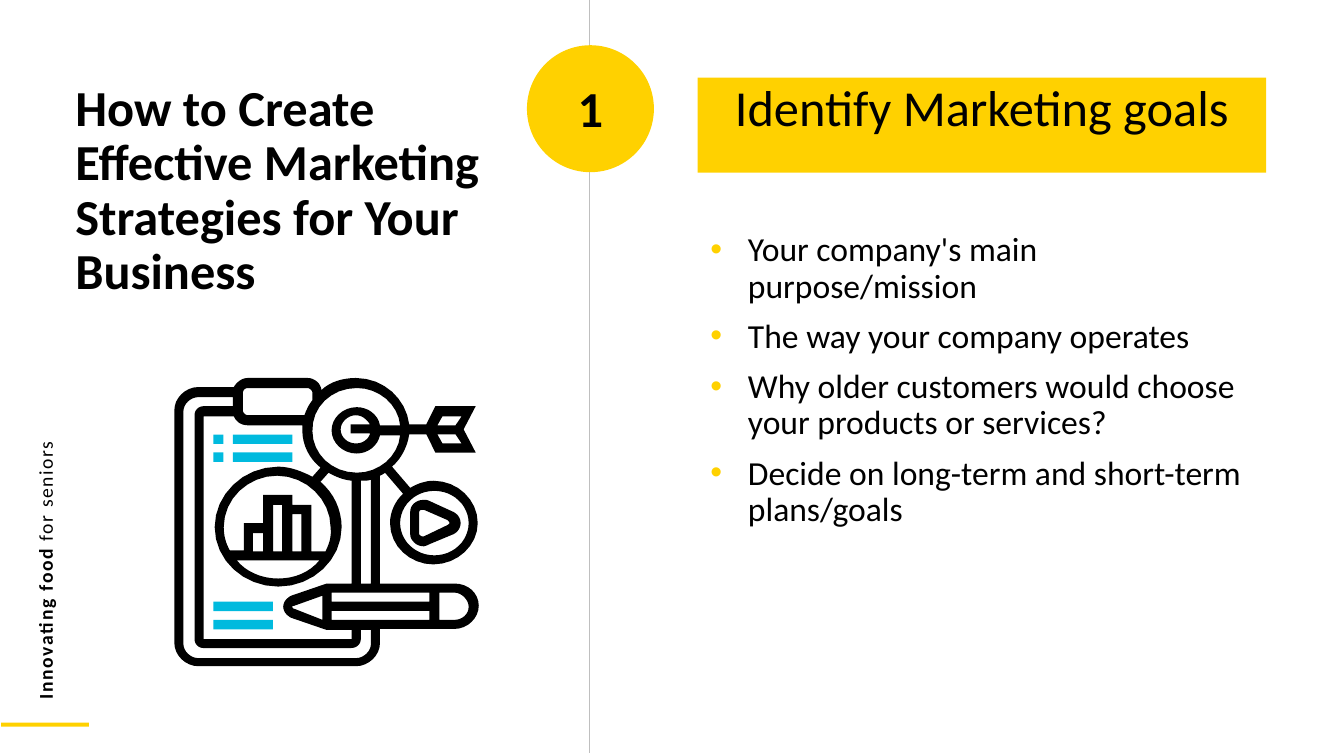
from dataclasses import dataclass
from math import cos, pi, sin

from lxml import etree
from pptx import Presentation, util as u
from pptx.dml.color import RGBColor
from pptx.enum import shapes, text
from pptx.oxml import ns


@dataclass(frozen=True)
class Theme:
    font: str = "Calibri"
    ink: str = "000000"
    yellow: str = "FFD100"
    cyan: str = "00BADE"
    rule: str = "BFBFBF"
    heading: int = 36
    body: int = 24
    tagline: int = 14


# Icon outlines use hundredths of an inch, measured from the slide corner
def outline(*steps):
    """Points of an outline; a step is a corner (x, y) or a cubic curve of six numbers."""
    points = []
    for step in steps:
        if len(step) == 2:
            points.append(step)
            continue
        bends = [points[-1], step[:2], step[2:4], step[4:]]
        for t in (i / 8 for i in range(1, 9)):
            weights = ((1 - t) ** 3, 3 * t * (1 - t) ** 2, 3 * t * t * (1 - t), t ** 3)
            points.append(tuple(sum(w * b[axis] for w, b in zip(weights, bends)) for axis in (0, 1)))
    return points


def oval(x, y, rx, ry):
    return [(x + rx * cos(pi * i / 24), y + ry * sin(pi * i / 24)) for i in range(48)]


def box(left, top, right, bottom):
    return [(left, top), (right, top), (right, bottom), (left, bottom)]


SILHOUETTE = outline(
    (451, 579), (377, 579), (377, 472), (379, 471, 381, 470, 382, 469), (400, 490),
    (392, 497, 387, 508, 387, 519), (387, 542, 407, 560, 430, 560),
    (454, 560, 474, 541, 474, 519), (474, 496, 454, 477, 430, 477),
    (422, 477, 414, 480, 407, 484), (389, 463), (398, 455, 404, 444, 406, 431),
    (423, 431), (432, 449), (472, 449), (460, 426), (472, 403), (432, 403),
    (423, 421), (406, 421), (403, 396, 381, 375, 353, 375),
    (340, 375, 327, 379, 319, 387), (318, 380, 312, 375, 305, 375), (246, 375),
    (240, 375, 235, 379, 232, 384), (197, 384), (184, 384, 173, 395, 173, 407),
    (173, 638), (173, 650, 184, 661, 197, 661), (353, 661),
    (366, 661, 377, 650, 377, 638), (377, 624), (451, 624),
    (464, 624, 475, 613, 475, 601), (475, 588, 464, 579, 451, 579))
PAPER = outline(
    (232, 413), (234, 418, 239, 422, 246, 422), (300, 422), (300, 427),
    (300, 442, 307, 455, 318, 464), (310, 473), (300, 468, 288, 463, 276, 463),
    (241, 463, 213, 491, 213, 523), (213, 556, 242, 582, 276, 582),
    (311, 582, 339, 555, 339, 523), (339, 506, 331, 489, 318, 478), (326, 469),
    (333, 473, 340, 476, 349, 477), (349, 579), (324, 579), (289, 591),
    (285, 593, 281, 597, 281, 602), (281, 607, 285, 611, 289, 613), (324, 625),
    (349, 625), (349, 634), (202, 634), (202, 413))
BOARD_EDGE = outline(
    (368, 639), (368, 646, 361, 653, 353, 653), (197, 653),
    (189, 653, 182, 646, 182, 639), (182, 408), (182, 401, 189, 394, 197, 394),
    (231, 394), (231, 403), (202, 403), (197, 403, 193, 407, 193, 412), (193, 634),
    (193, 639, 197, 643, 202, 643), (348, 643), (354, 643, 358, 639, 358, 634),
    (358, 625), (368, 625))
BOARD_SIDE = outline((368, 579), (358, 579), (358, 477), (361, 477, 365, 477, 368, 476))
CLIP = outline(
    (241, 390), (241, 387, 243, 385, 246, 385), (305, 385),
    (307, 385, 310, 387, 310, 390), (310, 397), (306, 402, 304, 407, 302, 412),
    (246, 412), (244, 412, 241, 410, 241, 407))
TARGET = outline(
    (354, 385), (376, 385, 395, 401, 397, 422), (377, 422),
    (375, 411, 365, 404, 354, 404), (340, 404, 329, 415, 329, 427),
    (329, 439, 340, 450, 354, 450), (365, 450, 375, 442, 377, 432), (397, 432),
    (395, 453, 376, 469, 354, 469), (329, 469, 310, 450, 310, 428),
    (309, 404, 329, 385, 354, 385))
BULLSEYE = outline(
    (367, 431), (365, 436, 360, 440, 353, 440), (345, 440, 338, 434, 338, 426),
    (338, 419, 345, 412, 353, 412), (359, 412, 364, 416, 367, 421), (348, 421),
    (348, 430), (367, 430))
FLETCHING = [[(439, 440), (434, 431), (452, 431), (458, 440)],
             [(439, 413), (458, 413), (452, 422), (434, 422)]]
CHART_DISC = outline(
    (323, 547), (309, 547), (309, 501), (290, 501), (290, 491), (261, 491), (261, 519),
    (242, 519), (242, 546), (228, 546), (224, 539, 222, 531, 222, 523),
    (222, 495, 246, 472, 275, 472), (304, 472, 328, 496, 328, 523),
    (329, 532, 327, 539, 323, 547))
CHART_BASE = outline((317, 556), (307, 568, 292, 574, 276, 574), (259, 574, 244, 567, 235, 556))
COLUMNS = [box(290, 510, 299, 547), box(271, 501, 280, 547), box(251, 529, 261, 547)]
PENCIL = [
    outline((292, 604), (291, 604, 290, 603, 290, 602), (290, 601, 291, 601, 292, 601),
            (320, 591), (320, 615)),
    box(329, 606, 426, 615), box(329, 588, 426, 597),
    outline((451, 615), (436, 615), (436, 588), (451, 588),
            (458, 588, 465, 595, 465, 602), (465, 610, 458, 615, 451, 615))]
PLAN_ICON = [SILHOUETTE, PAPER, BOARD_EDGE, BOARD_SIDE, CLIP, TARGET, BULLSEYE, *FLETCHING,
             CHART_DISC, CHART_BASE, *COLUMNS, *PENCIL, oval(431, 519, 34, 32)]
PLAY_ICON = [
    outline((407, 530), (407, 536, 413, 542, 420, 542), (422, 542, 424, 541, 426, 540),
            (450, 530), (454, 528, 457, 524, 457, 519), (457, 514, 454, 510, 450, 508),
            (426, 497), (424, 496, 423, 496, 420, 496), (413, 496, 407, 501, 407, 508)),
    outline((416, 508), (416, 506, 418, 506, 419, 506), (421, 506), (444, 516),
            (445, 517, 446, 518, 446, 519), (446, 520, 445, 520, 444, 521),
            (421, 532), (419, 533, 416, 531, 416, 530))]


class StrategySlide:
    def __init__(self, deck, theme):
        self.theme = theme
        self.slide = deck.slides.add_slide(deck.slide_layouts[6])

    def paint(self, shape, color):
        shape.shadow.inherit = False
        shape.fill.solid()
        shape.fill.fore_color.rgb = RGBColor.from_string(color)
        shape.line.fill.background()
        return shape

    def block(self, kind, place, color):
        shape = self.slide.shapes.add_shape(kind, *map(u.Cm, place))
        return self.paint(shape, color)

    def rule(self, x, top, bottom):
        line = self.slide.shapes.add_connector(
            shapes.MSO_CONNECTOR.STRAIGHT, *map(u.Cm, (x, top, x, bottom)))
        line.line.color.rgb = RGBColor.from_string(self.theme.rule)
        line.line.width = u.Pt(0.75)
        etree.SubElement(line._element.spPr, ns.qn("a:effectLst"))

    def icon(self, outlines, color):
        builder = None
        for points in outlines:
            points = [(x * 10, y * 10) for x, y in points]
            if builder is None:
                builder = self.slide.shapes.build_freeform(*points[0], scale=u.Cm(2.54) / 1000)
            else:
                builder.move_to(*points[0])
            builder.add_line_segments(points[1:], close=True)
        self.paint(builder.convert_to_shape(), color)

    def textbox(self, place):
        return self.slide.shapes.add_textbox(*map(u.Cm, place))

    def add_text(self, shape, paragraphs, size, align=text.PP_ALIGN.LEFT, bullet=False,
                 spacing=0.9, tracking=None):
        """Each paragraph is a list of (words, bold) runs."""
        frame = shape.text_frame
        frame.word_wrap = True
        frame.vertical_anchor = text.MSO_ANCHOR.TOP
        for index, runs in enumerate(paragraphs):
            paragraph = frame.add_paragraph() if index else frame.paragraphs[0]
            paragraph.alignment = align
            paragraph.line_spacing = spacing
            paragraph.space_before = u.Pt(10 if index else 0)
            if bullet:
                self.add_bullet(paragraph)
            for words, bold in runs:
                run = paragraph.add_run()
                run.text = words
                run.font.name = self.theme.font
                run.font.size = u.Pt(size)
                run.font.bold = bold
                run.font.color.rgb = RGBColor.from_string(self.theme.ink)
                if tracking:
                    run.font._element.set("spc", str(tracking))

    def add_bullet(self, paragraph):
        props = paragraph._p.get_or_add_pPr()
        props.set("marL", str(u.Cm(0.95)))
        props.set("indent", str(-u.Cm(0.95)))
        color = etree.SubElement(props, ns.qn("a:buClr"))
        etree.SubElement(color, ns.qn("a:srgbClr"), val=self.theme.yellow)
        etree.SubElement(props, ns.qn("a:buFont"), typeface="Arial")
        etree.SubElement(props, ns.qn("a:buChar"), char="•")


def main():
    deck = Presentation()
    deck.slide_width, deck.slide_height = u.Cm(33.87), u.Cm(19.05)
    theme = Theme()
    page = StrategySlide(deck, theme)
    rectangle, center = shapes.MSO_SHAPE.RECTANGLE, text.PP_ALIGN.CENTER

    # Divider, number disc and footer accent
    page.rule(14.86, -0.08, 18.97)
    page.block(shapes.MSO_SHAPE.OVAL, (13.28, 1.14, 3.2, 3.2), theme.yellow)
    page.block(rectangle, (0.03, 18.21, 2.21, 0.1), theme.yellow)

    # Vertical tagline
    tagline = page.textbox((-8.43, 7.87, 19.15, 0.86))
    tagline.rotation = 270
    page.add_text(tagline, [[("Innovating food ", True), ("for seniors", False)]],
                  theme.tagline, spacing=1.0, tracking=110)

    # Goals, step heading, title and step number
    goals = ["Your company's main purpose/mission",
             "The way your company operates",
             "Why older customers would choose your products or services?",
             "Decide on long-term and short-term plans/goals"]
    page.add_text(page.textbox((17.65, 5.74, 14.25, 10.34)),
                  [[(goal, False)] for goal in goals], theme.body, bullet=True)
    step_heading = page.block(rectangle, (17.58, 1.96, 14.33, 2.39), theme.yellow)
    page.add_text(step_heading, [[("Identify Marketing goals", False)]], theme.heading, center)
    page.add_text(page.textbox((1.65, 1.96, 11.1, 9.55)),
                  [[("How to Create Effective Marketing Strategies for Your Business", True)]],
                  theme.heading)
    page.add_text(page.textbox((13.28, 1.98, 3.2, 2.39)), [[("1", True)]], theme.heading, center)

    # Marketing plan icon with its coloured text lines
    page.icon(PLAN_ICON, theme.ink)
    page.icon(PLAY_ICON, theme.ink)
    for top in (15.16, 15.62):
        page.block(rectangle, (5.38, top, 1.5, 0.24), theme.cyan)
    for top in (10.95, 11.4):
        page.block(rectangle, (5.38, top, 0.25, 0.24), theme.cyan)
        page.block(rectangle, (5.87, top, 1.5, 0.24), theme.cyan)

    deck.save("out.pptx")


if __name__ == "__main__":
    main()
